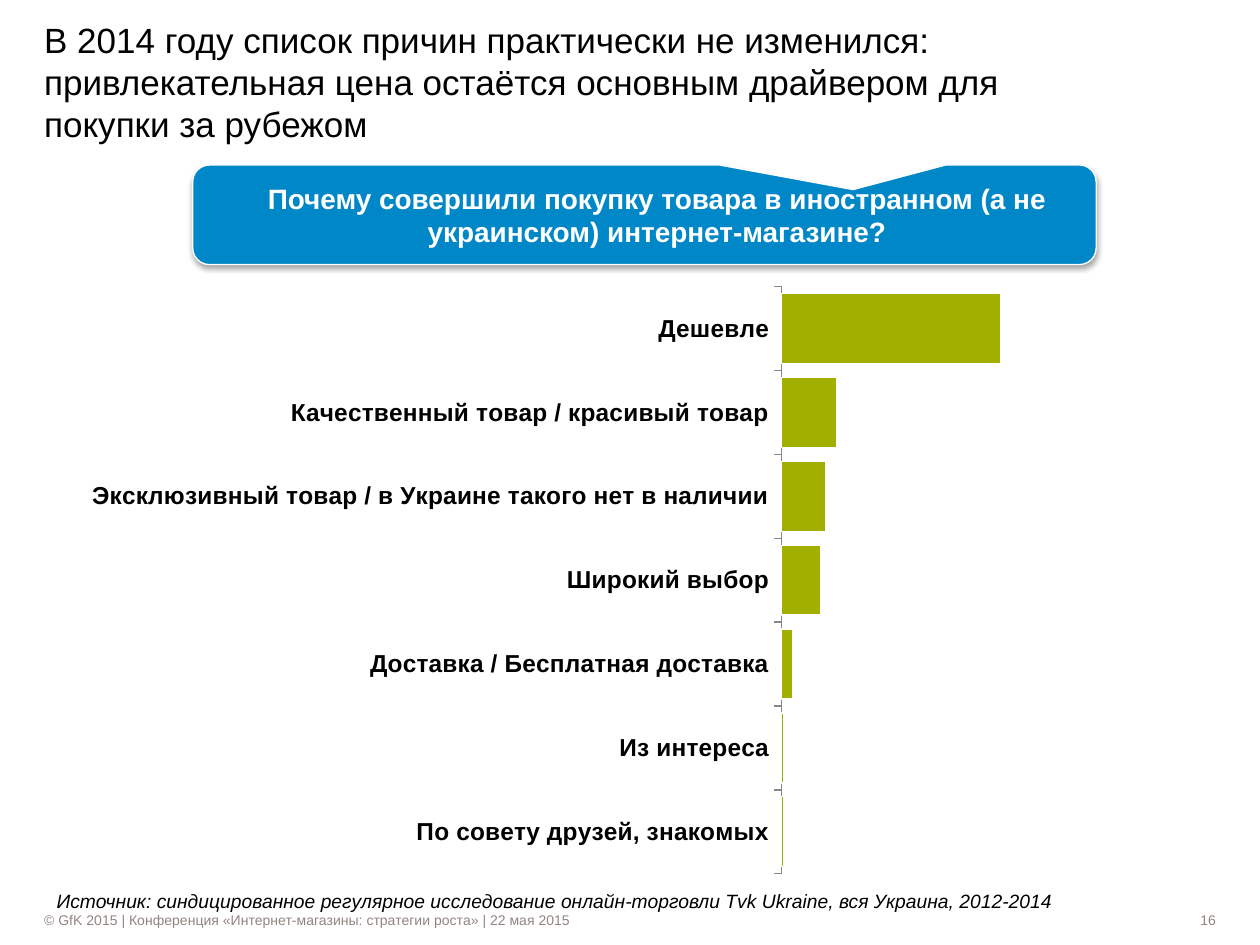
from dataclasses import dataclass

from lxml.etree import SubElement
from pptx import Presentation
from pptx.chart.data import CategoryChartData
from pptx.dml.color import RGBColor
from pptx.enum.chart import XL_CHART_TYPE, XL_TICK_LABEL_POSITION, XL_TICK_MARK
from pptx.enum.shapes import MSO_SHAPE
from pptx.enum.text import MSO_ANCHOR, MSO_AUTO_SIZE, PP_ALIGN
from pptx.oxml import parse_xml
from pptx.oxml.ns import nsdecls, qn
from pptx.util import Inches, Pt


@dataclass(frozen=True)
class Theme:
    font: str = "Arial"
    black: RGBColor = RGBColor(0x00, 0x00, 0x00)
    white: RGBColor = RGBColor(0xFF, 0xFF, 0xFF)
    blue: RGBColor = RGBColor(0x00, 0x87, 0xC8)
    green: RGBColor = RGBColor(0xA1, 0xAF, 0x00)
    footer_grey: RGBColor = RGBColor(0x92, 0x85, 0x80)
    axis_grey: RGBColor = RGBColor(0x86, 0x86, 0x86)
    title_size: Pt = Pt(20)
    question_size: Pt = Pt(16)
    label_size: Pt = Pt(14)
    source_size: Pt = Pt(11)
    chart_size: Pt = Pt(10)
    footer_size: Pt = Pt(8)


THEME = Theme()

REASONS = {
    "Дешевле": 100,
    "Качественный товар / красивый товар": 25,
    "Эксклюзивный товар / в Украине такого нет в наличии": 20,
    "Широкий выбор": 18,
    "Доставка / Бесплатная доставка": 5,
    "Из интереса": 1,
    "По совету друзей, знакомых": 1,
}


def box(left, top, width, height):
    return [Inches(value) for value in (left, top, width, height)]


def write(text_frame, text, size, color, align=PP_ALIGN.LEFT, bold=False, italic=False):
    paragraph = text_frame.paragraphs[0]
    paragraph.alignment = align
    run = paragraph.add_run()
    run.text = text
    font = run.font
    font.name, font.size, font.bold, font.italic = THEME.font, size, bold, italic
    font.color.rgb = color
    return paragraph


def clear_margins(text_frame):
    text_frame.margin_left = text_frame.margin_right = 0
    text_frame.margin_top = text_frame.margin_bottom = 0


def paint(shape, color):
    shape.shadow.inherit = False
    shape.fill.solid()
    shape.fill.fore_color.rgb = color


def set_title(slide, position, text):
    title = slide.shapes.title
    title.left, title.top, title.width, title.height = position
    text_frame = title.text_frame
    clear_margins(text_frame)
    text_frame.word_wrap = True
    text_frame.auto_size = MSO_AUTO_SIZE.NONE
    text_frame.vertical_anchor = MSO_ANCHOR.BOTTOM
    paragraph = write(text_frame, text, THEME.title_size, THEME.black)
    paragraph.line_spacing = 1.0
    paragraph.space_before = Pt(0)


def add_footer(slide, position, text, align=PP_ALIGN.LEFT):
    footer = slide.shapes.add_shape(MSO_SHAPE.RECTANGLE, *position)
    paint(footer, THEME.white)
    footer.line.fill.background()
    text_frame = footer.text_frame
    clear_margins(text_frame)
    text_frame.word_wrap = True
    text_frame.vertical_anchor = MSO_ANCHOR.MIDDLE
    write(text_frame, text, THEME.footer_size, THEME.footer_grey, align)


def add_source(slide, position, text):
    text_frame = slide.shapes.add_textbox(*position).text_frame
    text_frame.word_wrap = True
    text_frame.auto_size = MSO_AUTO_SIZE.SHAPE_TO_FIT_TEXT
    write(text_frame, text, THEME.source_size, THEME.black, italic=True)


def add_soft_shadow(shape):
    effects = shape._element.spPr.find(qn("a:effectLst"))
    shadow = SubElement(effects, qn("a:outerShdw"), blurRad=str(Pt(3.1)),
                        dist=str(Pt(1.8)), dir="5400000", rotWithShape="0")
    color = SubElement(shadow, qn("a:srgbClr"), val=str(THEME.black))
    SubElement(color, qn("a:alpha"), val="35000")


def add_question(slide, position, text):
    callout = slide.shapes.add_shape(MSO_SHAPE.ROUNDED_RECTANGULAR_CALLOUT, *position)
    for index, value in enumerate((0.231, -0.253, 0.167)):
        callout.adjustments[index] = value
    paint(callout, THEME.blue)
    callout.line.color.rgb = THEME.white
    callout.line.width = Pt(0.75)
    add_soft_shadow(callout)
    text_frame = callout.text_frame
    text_frame.word_wrap = True
    text_frame.vertical_anchor = MSO_ANCHOR.MIDDLE
    paragraph = write(text_frame, text, THEME.question_size, THEME.white,
                      PP_ALIGN.CENTER, bold=True)
    paragraph._p.get_or_add_pPr().set("marL", str(Inches(0.2)))


def set_plot_area(chart, left, top, width, height):
    plot_area = chart._chartSpace.chart.plotArea
    for layout in plot_area.findall(qn("c:layout")):
        plot_area.remove(layout)
    plot_area.insert(0, parse_xml(
        f'<c:layout {nsdecls("c")}><c:manualLayout><c:layoutTarget val="inner"/>'
        '<c:xMode val="edge"/><c:yMode val="edge"/>'
        f'<c:x val="{left}"/><c:y val="{top}"/><c:w val="{width}"/><c:h val="{height}"/>'
        '</c:manualLayout></c:layout>'))


def add_reason_chart(slide, position, reasons):
    data = CategoryChartData(number_format="General")
    data.categories = list(reasons)
    data.add_series("Series 1", list(reasons.values()))
    chart = slide.shapes.add_chart(XL_CHART_TYPE.BAR_CLUSTERED, *position, data).chart
    chart.has_title = chart.has_legend = False
    chart.font.name, chart.font.size, chart.font.bold = THEME.font, THEME.chart_size, True
    chart.font.color.rgb = THEME.black

    # Bars
    plot = chart.plots[0]
    plot.gap_width = 20
    plot.vary_by_categories = False
    bar_format = plot.series[0].format
    bar_format.fill.solid()
    bar_format.fill.fore_color.rgb = THEME.green
    bar_format.line.color.rgb = THEME.white
    bar_format.line.width = Pt(0.75)

    # Axes
    category_axis = chart.category_axis
    category_axis.reverse_order = True
    category_axis.has_major_gridlines = False
    category_axis.major_tick_mark = XL_TICK_MARK.OUTSIDE
    category_axis.minor_tick_mark = XL_TICK_MARK.NONE
    category_axis.tick_label_position = XL_TICK_LABEL_POSITION.NEXT_TO_AXIS
    category_axis.tick_labels.font.size = THEME.label_size
    category_axis.tick_labels.font.bold = True
    category_axis.format.line.color.rgb = THEME.axis_grey
    value_axis = chart.value_axis
    value_axis.minimum_scale, value_axis.maximum_scale = 0, 105
    value_axis.has_major_gridlines = False
    value_axis.visible = False
    set_plot_area(chart, 0.67, 0.001, 0.225, 0.963)


def main():
    presentation = Presentation()
    presentation.slide_width, presentation.slide_height = Inches(10), Inches(7.5)
    slide = presentation.slides.add_slide(presentation.slide_layouts[5])

    # Footer
    add_footer(slide, box(0.35, 7.22, 7.72, 0.16),
               "© GfK 2015 | Конференция «Интернет-магазины: стратегии роста» | 22 мая 2015")
    add_footer(slide, box(8.23, 7.22, 1.42, 0.16), "16", PP_ALIGN.RIGHT)

    # Heading, chart and question
    set_title(slide, box(0.35, 0.44, 8.58, 0.71),
              "В 2014 году список причин практически не изменился: привлекательная цена "
              "остаётся основным драйвером для покупки за рубежом")
    add_reason_chart(slide, box(0.73, 2.27, 8.15, 4.84), REASONS)
    add_question(slide, box(1.53, 1.31, 7.17, 0.79),
                 "Почему совершили покупку товара в иностранном (а не украинском) "
                 "интернет-магазине?")

    # Source line
    add_source(slide, box(0.35, 7.01, 8.31, 0.29),
               "Источник: синдицированное регулярное исследование онлайн-торговли "
               "Tvk Ukraine, вся Украина, 2012-2014")
    presentation.save("out.pptx")


if __name__ == "__main__":
    main()
